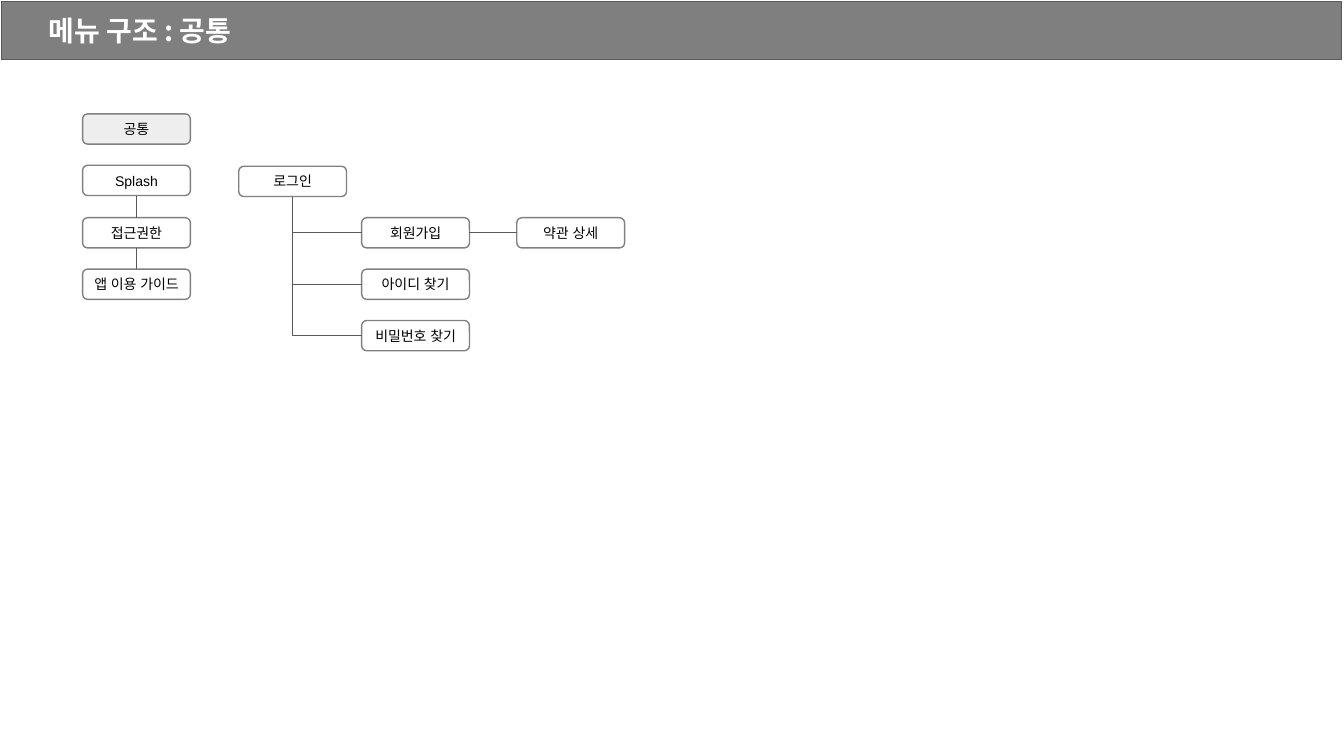
from lxml.etree import SubElement
from pptx import Presentation
from pptx.dml.color import RGBColor
from pptx.enum.shapes import MSO_CONNECTOR, MSO_SHAPE
from pptx.enum.text import MSO_ANCHOR, MSO_AUTO_SIZE, PP_ALIGN
from pptx.oxml.ns import qn
from pptx.util import Pt

PX = 9144
HEX = {"bar": "7F7F7F", "rule": "595959", "edge": "808080", "head": "EEEEEE",
       "white": "FFFFFF", "black": "000000"}
BOX_W, BOX_H = 107, 30
BOTTOM, LEFT, RIGHT, TOP = 2, 1, 3, 0


def tint(name):
    """Return a named colour."""
    return RGBColor.from_string(HEX[name])


def place(item, x, y, w, h):
    """Set a shape's box in px."""
    item.left, item.top, item.width, item.height = (round(n * PX) for n in (x, y, w, h))


def write(item, text, font, size, color, align, pads, bold=False):
    """Put one formatted run in a shape."""
    frame = item.text_frame
    frame.vertical_anchor = MSO_ANCHOR.MIDDLE
    frame.auto_size = MSO_AUTO_SIZE.NONE
    frame.word_wrap = False
    (frame.margin_left, frame.margin_top,
     frame.margin_right, frame.margin_bottom) = (n * PX for n in pads)
    para = frame.paragraphs[0]
    para.alignment = align
    run = para.add_run()
    run.text = text
    run.font.name, run.font.size, run.font.bold = font, Pt(size), bold
    run.font.color.rgb = tint(color)
    SubElement(run.font._element, qn("a:ea")).set("typeface", font)


def panel(slide, kind, box, fill, edge, width):
    """Add a filled and outlined shape."""
    item = slide.shapes.add_shape(kind, *(n * PX for n in box))
    item.shadow.inherit = False
    item.fill.solid()
    item.fill.fore_color.rgb = tint(fill)
    item.line.color.rgb = tint(edge)
    item.line.width = Pt(width)
    return item


def header(slide, x, y, w, h, text):
    """Draw the title bar and fill the title placeholder."""
    title = slide.shapes.title
    bar = panel(slide, MSO_SHAPE.RECTANGLE, (x, y, w, h), "bar", "rule", 0.75)
    title._element.addprevious(bar._element)
    place(title, x + 27, y - 2, w - 54, h + 3)
    write(title, text, "Noto Sans CJK KR", 20, "white", PP_ALIGN.LEFT, (19, 6, 11, 6), True)


def node(slide, x, y, text, fill="white"):
    """Add one menu box."""
    item = panel(slide, MSO_SHAPE.ROUNDED_RECTANGLE, (x, y, BOX_W, BOX_H), fill, "edge", 1)
    item.adjustments[0] = 0.167
    write(item, text, "Arial", 10, "black", PP_ALIGN.CENTER, (10, 10, 10, 10))
    return item


def link(slide, start, out, end, into, kind=MSO_CONNECTOR.STRAIGHT):
    """Join two menu boxes."""
    line = slide.shapes.add_connector(kind, 0, 0, 0, 0)
    line.begin_connect(start, out)
    line.end_connect(end, into)
    line.line.color.rgb = tint("rule")
    line.line.width = Pt(0.75)
    SubElement(line._element.spPr, qn("a:effectLst"))
    return line


def branch(slide, start, end):
    """Join a box's bottom to another's left side with one bend."""
    line = link(slide, start, BOTTOM, end, LEFT, MSO_CONNECTOR.ELBOW)
    x, y = line.begin_x / PX, line.begin_y / PX
    wide, tall = line.end_x / PX - x, line.end_y / PX - y
    place(line, x + (wide - tall) / 2, y + (tall - wide) / 2, tall, wide)
    props = line._element.spPr
    props.find(qn("a:prstGeom")).set("prst", "bentConnector2")
    frame = props.find(qn("a:xfrm"))
    frame.set("rot", "16200000")
    frame.set("flipH", "1")


def intro(slide, x, y):
    """Draw the common section's head and its chain of screens."""
    node(slide, x, y, "공통", "head")
    last = None
    for i, text in enumerate(("Splash", "접근권한", "앱 이용 가이드"), 1):
        item = node(slide, x, y + i * 103 // 2, text)
        if last:
            link(slide, last, BOTTOM, item, TOP)
        last = item


def login(slide, x, y):
    """Draw the login tree."""
    root = node(slide, x, y, "로그인")
    names = ("회원가입", "아이디 찾기", "비밀번호 찾기")
    kids = [node(slide, x + 122, y + 51 * i, text) for i, text in enumerate(names, 1)]
    for kid in kids:
        branch(slide, root, kid)
    terms = node(slide, x + 276, y + 51, "약관 상세")
    link(slide, kids[0], RIGHT, terms, LEFT, MSO_CONNECTOR.ELBOW)


def main():
    """Build and save the slide."""
    deck = Presentation()
    deck.slide_width, deck.slide_height = 1334 * PX, 750 * PX
    slide = deck.slides.add_slide(deck.slide_layouts[5])
    header(slide, 2, 2, 1330, 57, "메뉴 구조 : 공통")
    intro(slide, 82, 113)
    login(slide, 237, 165)
    deck.save("out.pptx")


if __name__ == "__main__":
    main()
